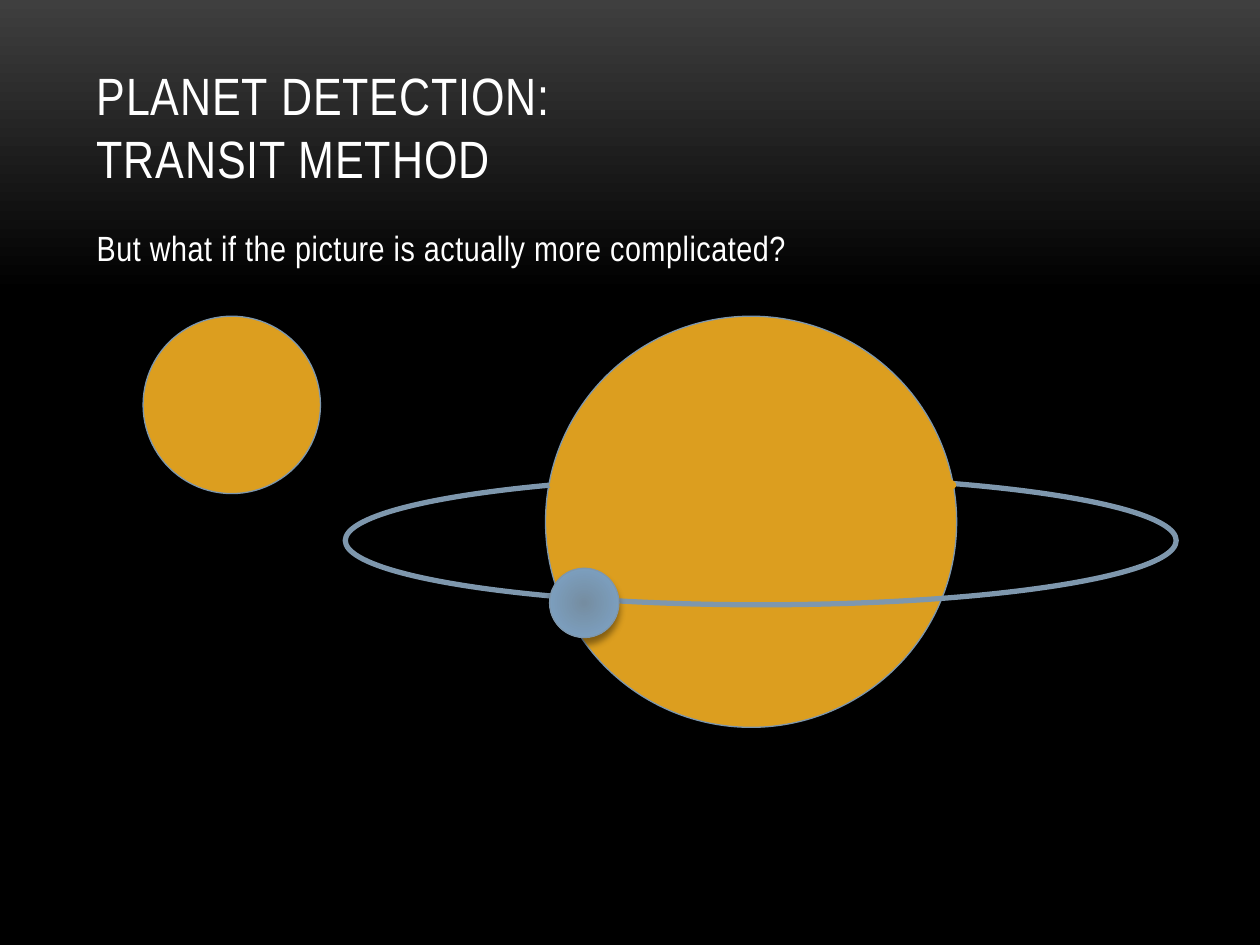
from dataclasses import dataclass

from lxml import etree
from pptx import Presentation
from pptx.dml.color import RGBColor as RGB
from pptx.enum.shapes import MSO_SHAPE as SHAPE
from pptx.enum.text import MSO_ANCHOR as ANCHOR, MSO_AUTO_SIZE as AUTO, PP_ALIGN as ALIGN
from pptx.oxml import parse_xml
from pptx.oxml.ns import nsdecls, qn
from pptx.util import Inches, Pt


@dataclass(frozen=True)
class Theme:
    font: str = "Arial Narrow"
    title_size: int = 30
    body_size: int = 20
    text: str = "FFFFFF"
    sky_top: str = "3F3F3F"
    sky: str = "000000"
    star: str = "DC9E1F"
    rim: str = "7E97AD"
    planet_core: str = "758DA1"
    planet_edge: str = "7FA6CA"


theme = Theme()
prs = Presentation()
prs.slide_width, prs.slide_height = Inches(10), Inches(7.5)
COL = prs.slide_width / 100
ROW = prs.slide_height / 75
s = prs.slides.add_slide(prs.slide_layouts[1])


def place(sp, x, y, w, h):
    sp.left, sp.top = round(x * COL), round(y * ROW)
    sp.width, sp.height = round(w * COL), round(h * ROW)


def add_run(p, text, size, spacing):
    r = p.add_run()
    r.text = text
    r.font.name = theme.font
    r.font.size = Pt(size)
    r.font.color.rgb = RGB.from_string(theme.text)
    r.font._element.set("spc", str(spacing))


bg = s.background.fill
bg.gradient()
bg.gradient_angle = 270
for stop, position, color in zip(bg.gradient_stops, (0, 0.31), (theme.sky_top, theme.sky)):
    stop.position = position
    stop.color.rgb = RGB.from_string(color)

title, body = s.shapes.title, s.placeholders[1]
place(title, 6.67, 3, 86.67, 12.5)
place(body, 6.67, 17.5, 82.9, 9.4)
for sp, anchor in ((title, ANCHOR.BOTTOM), (body, ANCHOR.TOP)):
    tf = sp.text_frame
    tf.word_wrap = True
    tf.auto_size = AUTO.NONE
    tf.vertical_anchor = anchor
    tf.paragraphs[0].alignment = ALIGN.LEFT

p = title.text_frame.paragraphs[0]
add_run(p, "PLANET DETECTION:", theme.title_size, 50)
p.add_line_break()
add_run(p, "TRANSIT METHOD", theme.title_size, 50)

p = body.text_frame.paragraphs[0]
pPr = p._p.get_or_add_pPr()
pPr.set("marL", "0")
pPr.set("indent", "0")
etree.SubElement(pPr, qn("a:buNone"))
p.space_before, p.space_after = Pt(0), Pt(6)
add_run(p, "But what if the picture is actually more complicated?", theme.body_size, 30)

planet_fill = (
    f'<a:gradFill {nsdecls("a")} rotWithShape="1"><a:gsLst>'
    f'<a:gs pos="0"><a:srgbClr val="{theme.planet_core}"/></a:gs>'
    f'<a:gs pos="100000"><a:srgbClr val="{theme.planet_edge}"/></a:gs></a:gsLst>'
    '<a:path path="circle"><a:fillToRect l="100000" t="100000" r="100000" b="100000"/></a:path>'
    '</a:gradFill>'
)
shadow = (
    f'<a:outerShdw {nsdecls("a")} blurRad="{Pt(4)}" dist="{Pt(3.4)}" dir="5400000" rotWithShape="0">'
    '<a:srgbClr val="000000"><a:alpha val="40000"/></a:srgbClr></a:outerShdw>'
)

star = (43.3, 25.1, 32.63, 32.63), theme.star, 0.75, True
orbit = (27.4, 37.8, 65.95, 10.2), None, 3, False
orbit_cover = (43.6, 36.5, 32.3, 4), theme.star, 0, False
planet = (43.62, 45.1, 5.5, 5.5), planet_fill, 0.75, True
companion = (11.36, 25.1, 14.08, 14.08), theme.star, 0.75, True
for box, fill, line, has_shadow in (star, orbit, orbit_cover, planet, companion):
    sp = s.shapes.add_shape(SHAPE.OVAL, 0, 0, 0, 0)
    place(sp, *box)
    sp.shadow.inherit = False
    if fill is None:
        sp.fill.background()
    elif fill == planet_fill:
        sp._element.spPr.find(qn("a:prstGeom")).addnext(parse_xml(fill))
    else:
        sp.fill.solid()
        sp.fill.fore_color.rgb = RGB.from_string(fill)
    if line:
        sp.line.color.rgb = RGB.from_string(theme.rim)
        sp.line.width = Pt(line)
    else:
        sp.line.fill.background()
    if has_shadow:
        sp._element.spPr.find(qn("a:effectLst")).append(parse_xml(shadow))

prs.save("out.pptx")
